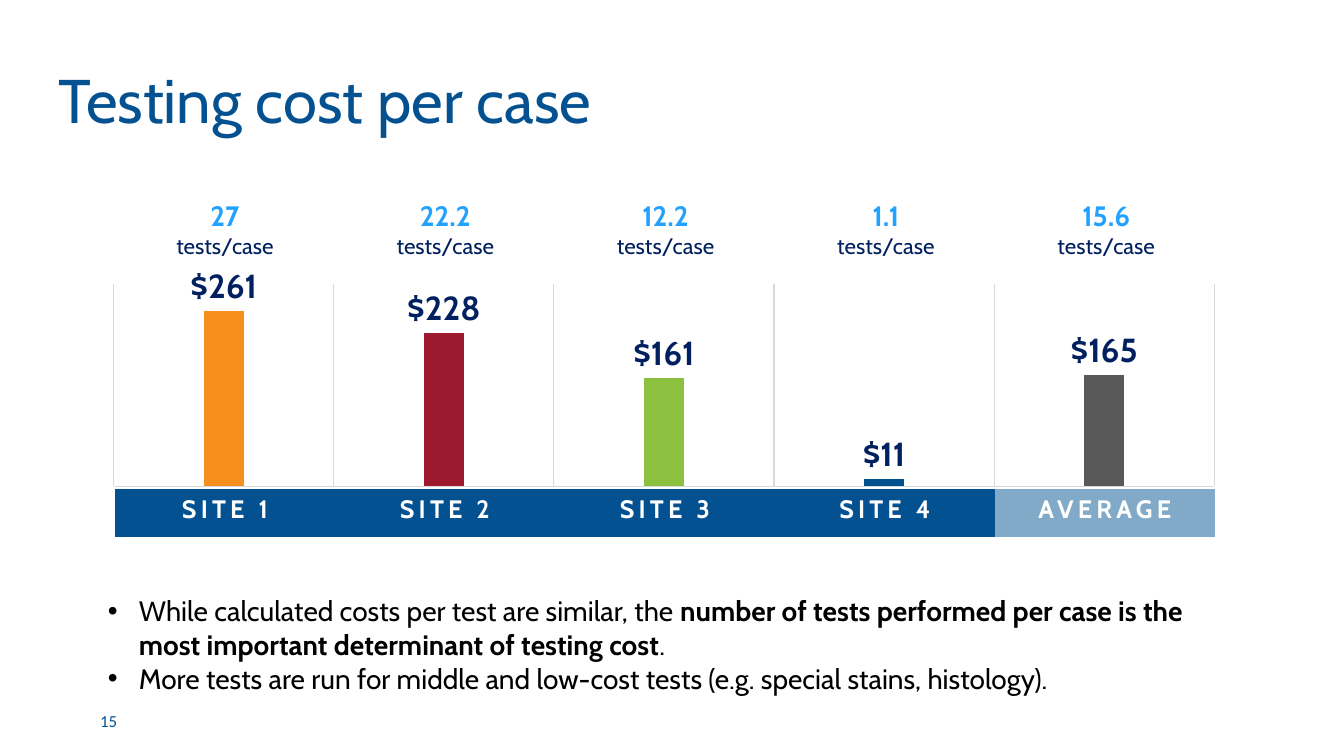
from lxml import etree
from pptx import Presentation
from pptx.chart.data import CategoryChartData
from pptx.dml.color import RGBColor
from pptx.enum.chart import XL_CHART_TYPE, XL_LABEL_POSITION, XL_TICK_MARK
from pptx.enum.text import MSO_ANCHOR, PP_ALIGN
from pptx.oxml import parse_xml
from pptx.oxml.ns import nsdecls, qn
from pptx.util import Pt

COLUMNS = XL_CHART_TYPE.COLUMN_CLUSTERED
OUTSIDE = XL_LABEL_POSITION.OUTSIDE_END
NO_TICK = XL_TICK_MARK.NONE
MIDDLE = MSO_ANCHOR.MIDDLE
LEFT, CENTER, RIGHT = PP_ALIGN.LEFT, PP_ALIGN.CENTER, PP_ALIGN.RIGHT
PLAIN_TABLE = "{2D5ABB26-0587-4C30-8999-92F81FD0307C}"
SCALE = 914400 / 100.8

THEME = {
    "blue": "035191", "pale": "80AAC8", "sky": "23A1FF", "navy": "002060",
    "white": "FFFFFF", "black": "000000", "grid": "D9D9D9", "axis": "595959",
    "title": {"size": Pt(44), "name": "Cabin"},
    "number": {"size": Pt(12), "name": "Calibri"},
    "rate": {"size": Pt(20), "name": "Cabin", "bold": True},
    "unit": {"size": Pt(16), "name": "Cabin", "bold": False},
    "body": {"size": Pt(20), "name": "Cabin", "bold": False},
    "strong": {"size": Pt(20), "name": "Cabin", "bold": True},
    "header": {"size": Pt(18), "name": "Cabin", "bold": True},
    "chart": {"size": Pt(10), "name": "Cabin"},
    "tick": {"size": Pt(8), "name": "Cabin"},
    "value": {"size": Pt(24), "name": "Cabin", "bold": True},
}

SITES = [
    ("Site 1", 261, "27", "F68F1E"),
    ("Site 2", 228, "22.2", "9D192E"),
    ("Site 3", 161, "12.2", "8BC13F"),
    ("Site 4", 11, "1.1", "00528F"),
    ("Average", 165, "15.6", "595959"),
]
BULLETS = [
    [("While calculated costs per test are similar, the ", "body"),
     ("number of tests performed per case is the most important determinant of testing cost", "strong"),
     (".", "body")],
    [("More tests are run for middle and low-cost tests (e.g. special stains, histology).", "body")],
]


def px(*lengths):
    return [round(length * SCALE) for length in lengths]


def style(font, kind, color):
    for name, value in THEME[kind].items():
        setattr(font, name, value)
    font.color.rgb = RGBColor.from_string(THEME[color])


deck = Presentation()
deck.slide_width, deck.slide_height = px(1344, 756)
page = deck.slides.add_slide(deck.slide_layouts[5])

title = page.shapes.title
title.left, title.top, title.width, title.height = px(48, 38, 1159, 132)
title.text_frame.text = "Testing cost per case"
title.text_frame.vertical_anchor = MIDDLE
para = title.text_frame.paragraphs[0]
para.alignment = LEFT
para.line_spacing = 0.9
style(para.runs[0].font, "title", "blue")

number_box = page.shapes.add_textbox(*px(69, 701, 58, 40))
number_box.text_frame.word_wrap = True
number_box.text_frame.vertical_anchor = MIDDLE
para = number_box.text_frame.paragraphs[0]
para.alignment = RIGHT
span = para.add_run()
span.text = "15"
style(span.font, "number", "blue")

data = CategoryChartData()
data.categories = [site for site, cost, rate, color in SITES]
data.add_series("Series 1", [cost for site, cost, rate, color in SITES])
chart = page.shapes.add_chart(COLUMNS, *px(98, 266, 1131, 269), data).chart
chart.has_title = False
chart.has_legend = False
style(chart.font, "chart", "black")

cost_axis = chart.value_axis
cost_axis.minimum_scale, cost_axis.maximum_scale = 0, 300
cost_axis.has_major_gridlines = False
cost_axis.visible = False
site_axis = chart.category_axis
site_axis.major_tick_mark = NO_TICK
site_axis.has_major_gridlines = True
style(site_axis.tick_labels.font, "tick", "axis")
for line in (site_axis.format.line, site_axis.major_gridlines.format.line):
    line.color.rgb = RGBColor.from_string(THEME["grid"])
    line.width = Pt(0.75)

plot = chart.plots[0]
plot.gap_width = 444
plot.overlap = -90
plot.vary_by_categories = False
plot.has_data_labels = True
labels = plot.data_labels
labels.show_value = True
labels.position = OUTSIDE
labels.number_format = '"$"#,##0'
labels.number_format_is_linked = False
style(labels.font, "value", "navy")

plot_area = chart.element.xpath("c:chart/c:plotArea")[0]
for old_layout in plot_area.findall(qn("c:layout")):
    plot_area.remove(old_layout)
plot_area.insert(0, parse_xml(
    f'<c:layout {nsdecls("c")}><c:manualLayout><c:layoutTarget val="inner"/>'
    '<c:xMode val="edge"/><c:yMode val="edge"/><c:x val="0.014"/><c:y val="0.062"/>'
    '<c:w val="0.973"/><c:h val="0.756"/></c:manualLayout></c:layout>'))

table_frame = page.shapes.add_table(1, len(SITES), *px(115, 489, 1100, 48))
table_frame.element.xpath(".//a:tableStyleId")[0].text = PLAIN_TABLE

for index, (site, cost, rate, color) in enumerate(SITES):
    bar = plot.series[0].points[index].format.fill
    bar.solid()
    bar.fore_color.rgb = RGBColor.from_string(color)

    rate_box = page.shapes.add_textbox(*px(163 + index * 220.3, 194, 124, 72))
    frame = rate_box.text_frame
    frame.word_wrap = True
    for para, text, kind, tint in (
        (frame.paragraphs[0], rate, "rate", "sky"),
        (frame.add_paragraph(), "tests/case", "unit", "navy"),
    ):
        para.alignment = CENTER
        span = para.add_run()
        span.text = text
        style(span.font, kind, tint)

    cell = table_frame.table.cell(0, index)
    cell.fill.solid()
    cell.fill.fore_color.rgb = RGBColor.from_string(THEME["pale" if site == "Average" else "blue"])
    para = cell.text_frame.paragraphs[0]
    para.alignment = CENTER
    span = para.add_run()
    span.text = site.upper()
    style(span.font, "header", "white")
    span.font._element.set("spc", "300")

body_frame = page.shapes.add_textbox(*px(98, 589, 1143, 112)).text_frame
body_frame.word_wrap = True
indent = px(31)[0]
for index, spans in enumerate(BULLETS):
    para = body_frame.add_paragraph() if index else body_frame.paragraphs[0]
    settings = para._p.get_or_add_pPr()
    settings.set("marL", str(indent))
    settings.set("indent", str(-indent))
    etree.SubElement(settings, qn("a:buFont")).set("typeface", "Arial")
    etree.SubElement(settings, qn("a:buChar")).set("char", "•")
    for text, kind in spans:
        span = para.add_run()
        span.text = text
        style(span.font, kind, "black")

deck.save("out.pptx")
